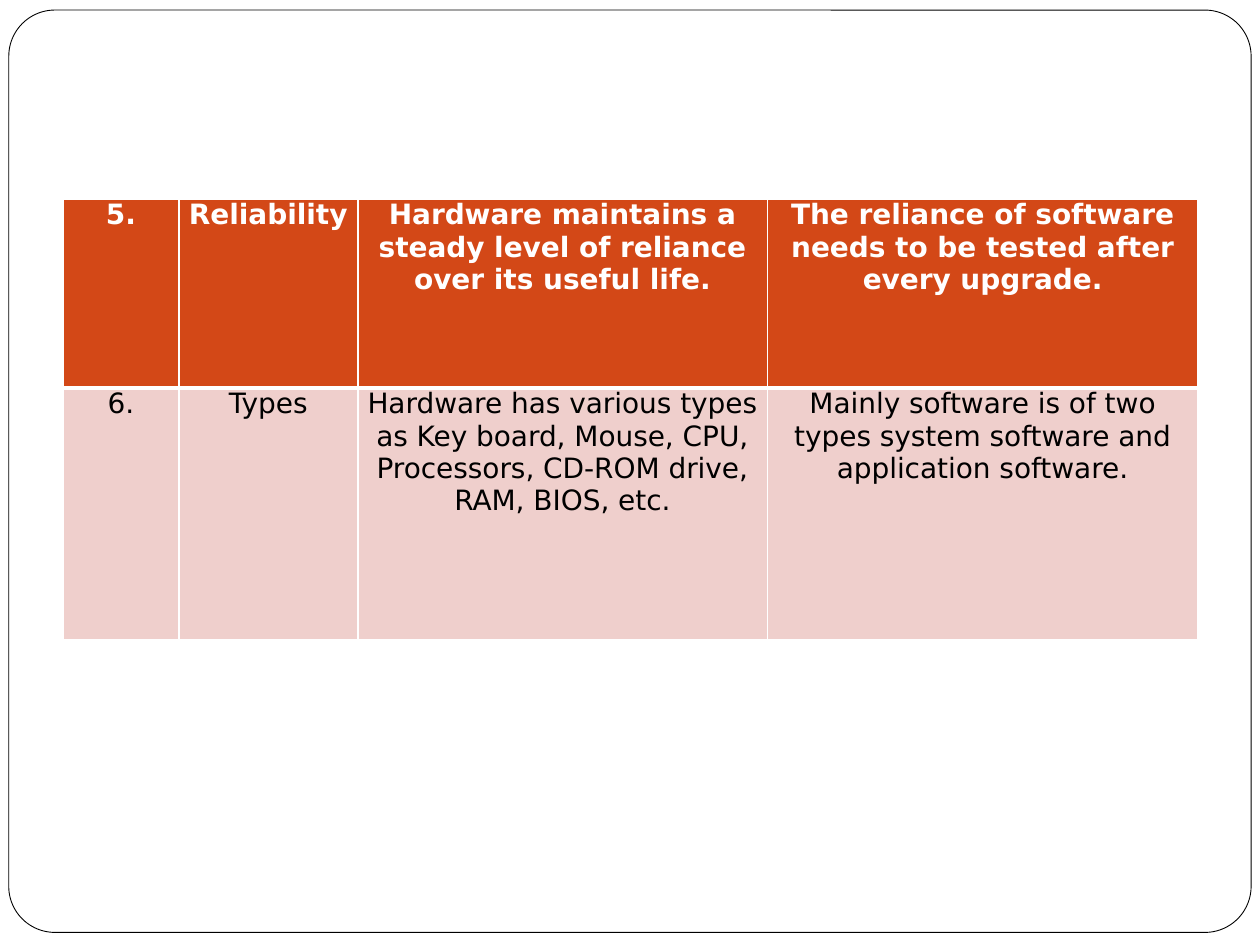
from lxml.etree import SubElement
from pptx import Presentation
from pptx.dml.color import RGBColor
from pptx.enum.shapes import MSO_SHAPE
from pptx.enum.text import PP_ALIGN
from pptx.oxml.ns import qn
from pptx.util import Inches, Pt

WHITE = RGBColor(0xFF, 0xFF, 0xFF)
BLACK = RGBColor(0, 0, 0)
ORANGE = RGBColor(0xD3, 0x48, 0x17)
PINK = RGBColor(0xEF, 0xCF, 0xCC)
FONT = "DejaVu Sans"

WIDTHS = [0.92, 1.42, 3.25, 3.42]
HEIGHTS = [1.5, 2]
ROWS = [
    ["5.", "Reliability",
     "Hardware maintains a steady level of reliance over its useful life.",
     "The reliance of software needs to be tested after every upgrade."],
    ["6.", "Types",
     "Hardware has various types as Key board, Mouse, CPU, Processors, "
     "CD-ROM drive, RAM, BIOS, etc.",
     "Mainly software is of two types system software and "
     "application software."],
]


def add_frame(slide):
    frame = slide.shapes.add_shape(
        MSO_SHAPE.ROUNDED_RECTANGLE,
        Inches(0.07), Inches(0.08), Inches(9.86), Inches(7.32))
    frame.adjustments[0] = 0.05
    frame.shadow.inherit = False
    frame.fill.solid()
    frame.fill.fore_color.rgb = WHITE
    frame.line.color.rgb = BLACK
    frame.line.width = Pt(0.5)


def set_borders(cell, top, bottom):
    """Draw white borders; top and bottom are widths in points."""
    props = cell._tc.get_or_add_tcPr()
    for side, width in (("L", 1), ("R", 1), ("T", top), ("B", bottom)):
        line = SubElement(props, qn(f"a:ln{side}"), w=str(Pt(width)))
        fill = SubElement(line, qn("a:solidFill"))
        SubElement(fill, qn("a:srgbClr"), val=str(WHITE))


def fill_cell(cell, text, head):
    set_borders(cell, 1 if head else 3, 3 if head else 1)
    cell.fill.solid()
    cell.fill.fore_color.rgb = ORANGE if head else PINK
    cell.margin_left = cell.margin_right = Inches(0.06)
    cell.margin_top = cell.margin_bottom = 0
    para = cell.text_frame.paragraphs[0]
    para.alignment = PP_ALIGN.CENTER
    para.space_before = para.space_after = Pt(1)
    run = para.add_run()
    run.text = text
    run.font.name = FONT
    run.font.size = Pt(16)
    run.font.bold = head
    run.font.color.rgb = WHITE if head else BLACK


def add_grid(slide):
    table = slide.shapes.add_table(
        len(ROWS), len(WIDTHS), Inches(0.5), Inches(1.58),
        Inches(9), Inches(sum(HEIGHTS))).table
    for col, width in zip(table.columns, WIDTHS):
        col.width = Inches(width)
    for i, (row, height) in enumerate(zip(table.rows, HEIGHTS)):
        row.height = Inches(height)
        for cell, text in zip(row.cells, ROWS[i]):
            fill_cell(cell, text, i == 0)


def main():
    deck = Presentation()
    deck.slide_width, deck.slide_height = Inches(10), Inches(7.5)
    slide = deck.slides.add_slide(deck.slide_layouts[6])
    add_frame(slide)
    add_grid(slide)
    deck.save("out.pptx")


if __name__ == "__main__":
    main()
